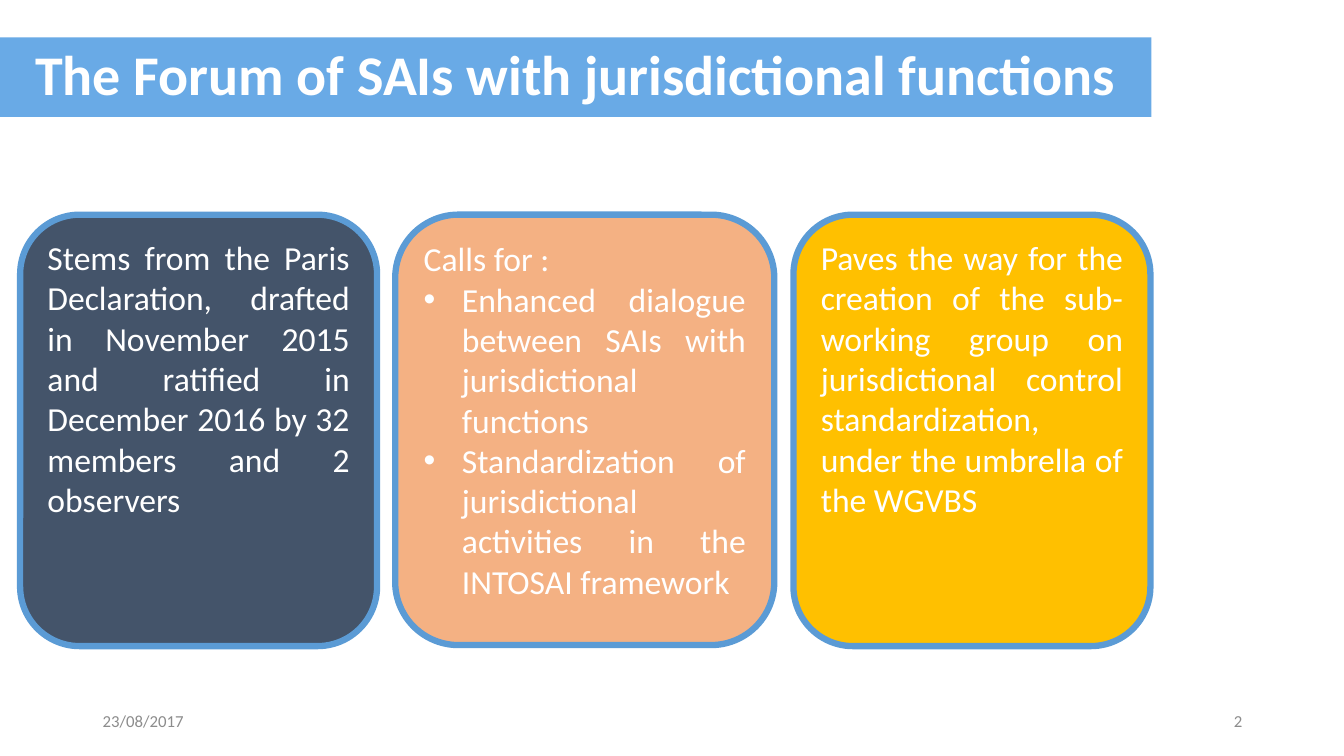
from dataclasses import dataclass
from typing import Any

from lxml.etree import SubElement
from pptx import Presentation
from pptx.dml.color import RGBColor
from pptx.enum.shapes import MSO_SHAPE
from pptx.enum.text import MSO_ANCHOR, PP_ALIGN
from pptx.oxml.ns import qn
from pptx.util import Inches, Pt


@dataclass(frozen=True)
class Theme:
    font: str = "Calibri"
    banner: str = "69AAE6"
    outline: str = "5B9BD5"
    light: str = "FFFFFF"
    muted: str = "8C8C8C"
    navy: str = "44546A"
    peach: str = "F4B183"
    gold: str = "FFC000"
    title_size: int = 40
    body_size: int = 24
    footer_size: int = 12
    outline_width: float = 4.5


@dataclass(frozen=True)
class Card:
    left: float
    width: float
    height: float
    fill: str
    intro: str
    bullets: tuple[str, ...] = ()


@dataclass(frozen=True)
class Footer:
    left: float
    text: str
    alignment: PP_ALIGN


THEME = Theme()
CARD_TOP = 2.13
BULLET_INDENT = 0.38

CARDS = (
    Card(0.2, 3.54, 4.28, THEME.navy,
         "Stems from the Paris Declaration, drafted in November 2015 and "
         "ratified in December 2016 by 32 members and 2 observers"),
    Card(3.92, 3.76, 4.27, THEME.peach, "Calls for :",
         ("Enhanced dialogue between SAIs with jurisdictional functions",
          "Standardization of jurisdictional activities in the INTOSAI framework")),
    Card(7.87, 3.54, 4.28, THEME.gold,
         "Paves the way for the creation of the sub-working group on "
         "jurisdictional control standardization, under the umbrella of the WGVBS"),
)

FOOTERS = (
    Footer(0.92, "23/08/2017", PP_ALIGN.LEFT),
    Footer(9.42, "2", PP_ALIGN.RIGHT),
)


def apply_format(target: Any, values: dict[str, Any]) -> None:
    for name, value in values.items():
        setattr(target, name, value)


def write_paragraph(paragraph: Any, text: str, size: int, color: str,
                    alignment: PP_ALIGN, bold: bool = False) -> None:
    paragraph.alignment = alignment
    run = paragraph.add_run()
    run.text = text
    apply_format(run.font, {"name": THEME.font, "size": Pt(size), "bold": bold})
    run.font.color.rgb = RGBColor.from_string(color)


def add_bullet(paragraph: Any) -> None:
    properties = paragraph._p.get_or_add_pPr()
    indent = Inches(BULLET_INDENT)
    properties.set("marL", str(indent))
    properties.set("indent", str(-indent))
    SubElement(properties, qn("a:buFont"), typeface="Arial")
    SubElement(properties, qn("a:buChar"), char="•")


def add_filled_shape(slide: Any, kind: MSO_SHAPE, left: float, top: float,
                     width: float, height: float, fill: str) -> Any:
    shape = slide.shapes.add_shape(
        kind, Inches(left), Inches(top), Inches(width), Inches(height))
    shape.shadow.inherit = False
    shape.fill.solid()
    shape.fill.fore_color.rgb = RGBColor.from_string(fill)
    return shape


def add_title(slide: Any, text: str) -> None:
    banner = add_filled_shape(
        slide, MSO_SHAPE.RECTANGLE, 0, 0.37, 11.42, 0.79, THEME.banner)
    banner.line.fill.background()
    frame = banner.text_frame
    apply_format(frame, {"word_wrap": True, "margin_left": Inches(0.35),
                         "vertical_anchor": MSO_ANCHOR.MIDDLE})
    paragraph = frame.paragraphs[0]
    paragraph.line_spacing = 0.9
    write_paragraph(paragraph, text, THEME.title_size, THEME.light,
                    PP_ALIGN.LEFT, bold=True)


def add_card(slide: Any, card: Card) -> None:
    shape = add_filled_shape(slide, MSO_SHAPE.ROUNDED_RECTANGLE, card.left,
                             CARD_TOP, card.width, card.height, card.fill)
    shape.line.color.rgb = RGBColor.from_string(THEME.outline)
    shape.line.width = Pt(THEME.outline_width)
    frame = shape.text_frame
    apply_format(frame, {"word_wrap": True, "vertical_anchor": MSO_ANCHOR.TOP})
    write_paragraph(frame.paragraphs[0], card.intro, THEME.body_size,
                    THEME.light, PP_ALIGN.JUSTIFY)
    for bullet in card.bullets:
        paragraph = frame.add_paragraph()
        write_paragraph(paragraph, bullet, THEME.body_size, THEME.light,
                        PP_ALIGN.JUSTIFY)
        add_bullet(paragraph)


def add_footer(slide: Any, footer: Footer) -> None:
    text_box = slide.shapes.add_textbox(
        Inches(footer.left), Inches(6.95), Inches(3), Inches(0.4))
    frame = text_box.text_frame
    apply_format(frame, {"word_wrap": True, "vertical_anchor": MSO_ANCHOR.MIDDLE})
    write_paragraph(frame.paragraphs[0], footer.text, THEME.footer_size,
                    THEME.muted, footer.alignment)


def main() -> None:
    presentation = Presentation()
    apply_format(presentation, {"slide_width": Inches(13.33),
                                "slide_height": Inches(7.5)})
    slide = presentation.slides.add_slide(presentation.slide_layouts[6])

    # Title banner
    add_title(slide, "The Forum of SAIs with jurisdictional functions")

    # Date and slide number
    for footer in FOOTERS:
        add_footer(slide, footer)

    # Three cards
    for card in CARDS:
        add_card(slide, card)

    presentation.save("out.pptx")


if __name__ == "__main__":
    main()
